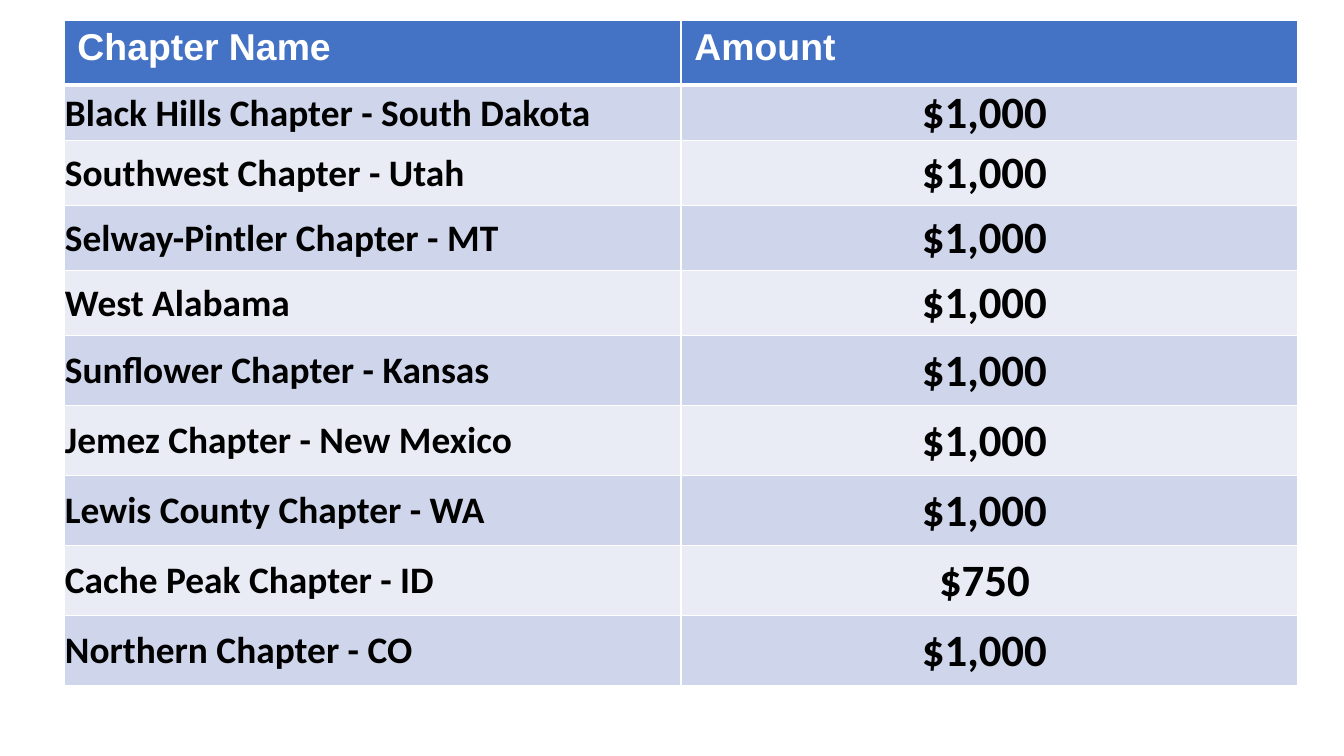
from lxml import etree
from pptx import Presentation
from pptx import util as u
from pptx.dml.color import RGBColor
from pptx.enum import text
from pptx.oxml import ns

PX_PER_INCH = 134.4
BLANK_LAYOUT = 6

CHAPTERS = [
    ("Black Hills Chapter - South Dakota", "$1,000 "),
    ("Southwest Chapter - Utah", "$1,000 "),
    ("Selway-Pintler Chapter - MT", "$1,000 "),
    ("West Alabama", "$1,000 "),
    ("Sunflower Chapter - Kansas", "$1,000 "),
    ("Jemez Chapter - New Mexico", "$1,000 "),
    ("Lewis County Chapter - WA", "$1,000 "),
    ("Cache Peak Chapter - ID", "$750 "),
    ("Northern Chapter - CO", "$1,000 "),
]
ROW_HEIGHTS = [65, 55] + [65] * 3 + [70] * 5
COLUMN_WIDTH = 617


def px(length):
    return u.Emu(round(length * u.Inches(1) / PX_PER_INCH))


def color(hex_string):
    return RGBColor.from_string(hex_string)


class Deck:
    """Holds the table style and the current slide."""

    header_fill, bands, border = "4472C4", ("CFD5EA", "E9EBF5"), "FFFFFF"
    header_font = {"name": "Arial", "size": u.Pt(20), "bold": True}
    name_font = {"name": "Calibri", "size": u.Pt(20), "bold": True}
    amount_font = {**name_font, "size": u.Pt(24)}
    body_cell = {
        "vertical_anchor": text.MSO_ANCHOR.MIDDLE,
        "margin_left": px(1), "margin_right": px(1),
        "margin_top": px(1), "margin_bottom": 0,
    }

    def __init__(self, width, height):
        self.presentation = Presentation()
        self.presentation.slide_width = px(width)
        self.presentation.slide_height = px(height)
        layout = self.presentation.slide_layouts[BLANK_LAYOUT]
        self.slide = self.presentation.slides.add_slide(layout)

    def borders(self, cell, top, bottom):
        properties = cell._tc.get_or_add_tcPr()
        for side, points in zip("LRTB", (1, 1, top, bottom)):
            line = etree.SubElement(properties, ns.qn(f"a:ln{side}"), w=str(u.Pt(points)))
            fill = etree.SubElement(line, ns.qn("a:solidFill"))
            etree.SubElement(fill, ns.qn("a:srgbClr"), val=self.border)

    def cell(self, cell, words, fill, ink, font, layout, align, edges):
        self.borders(cell, *edges)
        cell.fill.solid()
        cell.fill.fore_color.rgb = color(fill)
        for key, value in layout.items():
            setattr(cell, key, value)
        paragraph = cell.text_frame.paragraphs[0]
        paragraph.alignment = align
        run = paragraph.add_run()
        run.text = words
        for key, value in font.items():
            setattr(run.font, key, value)
        run.font.color.rgb = color(ink)

    def table(self, left, top, headings, records, column_width, row_heights):
        columns = len(headings)
        grid = self.slide.shapes.add_table(
            len(row_heights), columns, px(left), px(top),
            px(column_width * columns), px(sum(row_heights))).table
        for column in grid.columns:
            column.width = px(column_width)
        for row, height in zip(grid.rows, row_heights):
            row.height = px(height)

        # Header row with a heavy rule below
        for index, heading in enumerate(headings):
            self.cell(grid.cell(0, index), heading, self.header_fill, "FFFFFF",
                      self.header_font, {}, text.PP_ALIGN.LEFT, (1, 3))

        # Banded rows: chapter on the left, amount centred
        styles = [(self.name_font, text.PP_ALIGN.LEFT),
                  (self.amount_font, text.PP_ALIGN.CENTER)]
        for number, record in enumerate(records, start=1):
            band = self.bands[(number - 1) % 2]
            edges = (3 if number == 1 else 1, 1)
            for index, (words, (font, align)) in enumerate(zip(record, styles)):
                self.cell(grid.cell(number, index), words, band, "000000",
                          font, self.body_cell, align, edges)


def main():
    deck = Deck(1344, 756)
    deck.table(64, 20, ("Chapter Name", "Amount"), CHAPTERS, COLUMN_WIDTH, ROW_HEIGHTS)
    deck.presentation.save("out.pptx")


if __name__ == "__main__":
    main()
